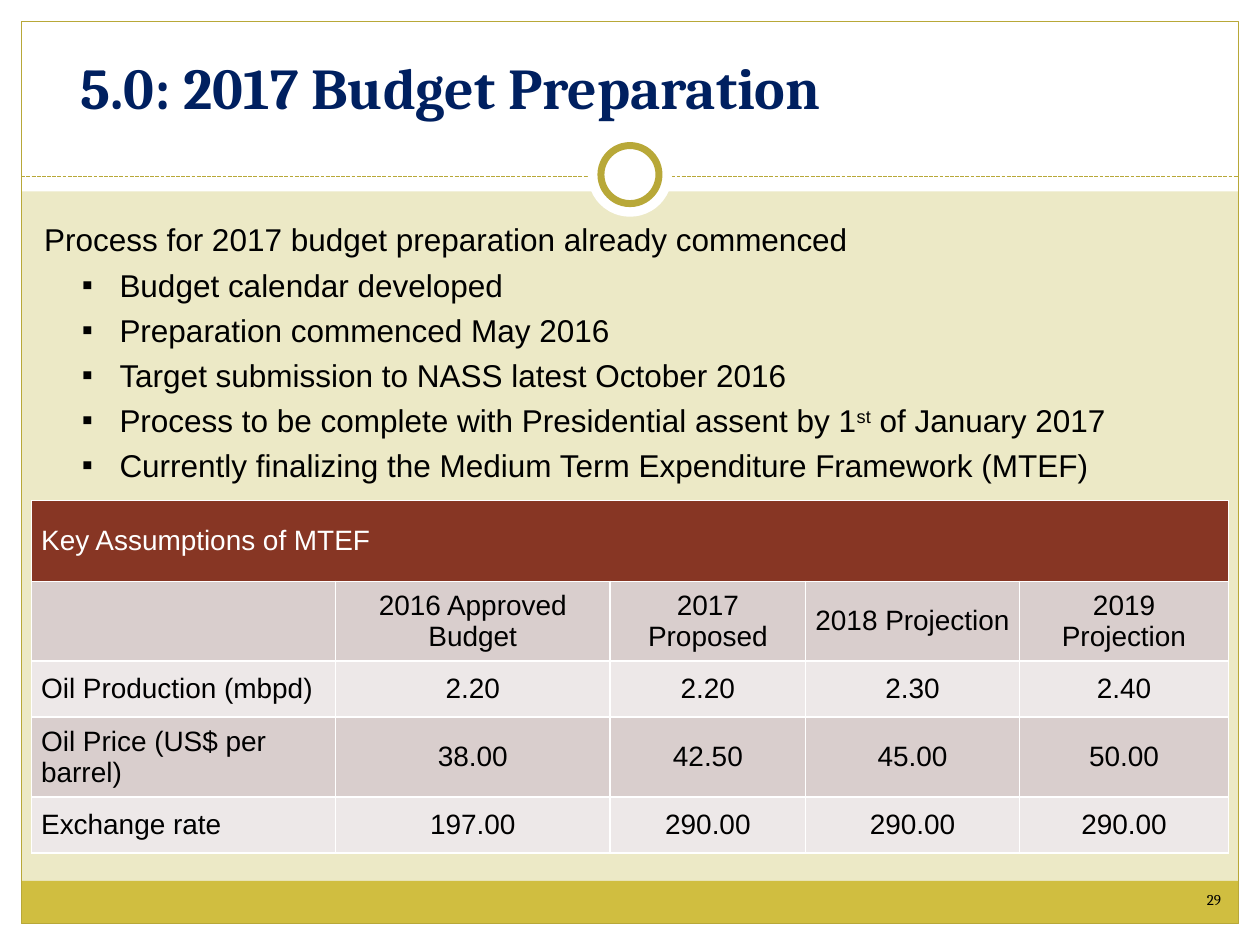
from dataclasses import dataclass
from lxml.etree import SubElement
from pptx import Presentation
from pptx.dml.color import RGBColor
from pptx.enum.dml import MSO_LINE
from pptx.enum.shapes import MSO_CONNECTOR, MSO_SHAPE
from pptx.enum.text import MSO_ANCHOR, MSO_AUTO_SIZE, PP_ALIGN
from pptx.oxml.ns import qn
from pptx.util import Cm, Pt


@dataclass(frozen=True)
class Theme:
    page: str = "ECE9C6"
    white: str = "FFFFFF"
    black: str = "000000"
    navy: str = "002060"
    gold: str = "B8A838"
    foot: str = "D0BE40"
    head: str = "873624"
    bands: tuple = ("D9CECD", "EDE8E8")
    serif: str = "Cambria"
    sans: str = "Arial"
    big: float = 33
    text: float = 18
    cell: float = 16
    small: float = 8.6


THEME = Theme()
WIDE, HIGH = 25.4, 19.05
POINTS = [
    "Budget calendar developed",
    "Preparation commenced May 2016",
    "Target submission to NASS latest October 2016",
    "Process to be complete with Presidential assent by 1^st^ of January 2017",
    "Currently finalizing the Medium Term Expenditure Framework (MTEF)",
]
ROWS = [
    ["Key Assumptions of MTEF", "", "", "", ""],
    ["", "2016 Approved Budget", "2017 Proposed", "2018 Projection", "2019 Projection"],
    ["Oil Production (mbpd)", "2.20", "2.20", "2.30", "2.40"],
    ["Oil Price (US$ per barrel)", "38.00", "42.50", "45.00", "50.00"],
    ["Exchange rate", "197.00", "290.00", "290.00", "290.00"],
]


def tint(name):
    return RGBColor.from_string(name)


def style(para, size, color, face=THEME.sans, bold=False):
    for run in para.runs:
        font = run.font
        font.name, font.size, font.bold = face, Pt(size), bold
        font.color.rgb = tint(color)


def add_form(slide, kind, box, fill=None, line=None, width=0.75):
    form = slide.shapes.add_shape(kind, *map(Cm, box))
    form.shadow.inherit = False
    if fill:
        form.fill.solid()
        form.fill.fore_color.rgb = tint(fill)
    else:
        form.fill.background()
    if line:
        form.line.color.rgb = tint(line)
        form.line.width = Pt(width)
    else:
        form.line.fill.background()
    return form


def add_frame(slide, box):
    left, top, wide, high = box
    edge, band, foot = 0.43, 3.86, 0.86
    rect = MSO_SHAPE.RECTANGLE
    right, base = left + wide - edge, top + high - edge
    inner = wide - 2 * edge
    for part in [
        (left, base, wide, edge),
        (left, top, wide, band),
        (left, top, edge, high),
        (right, top, edge, high),
    ]:
        add_form(slide, rect, part, THEME.white)
    add_form(slide, rect, (left + edge, base - foot, inner, foot), THEME.foot)
    add_form(slide, rect, (left + edge, top + edge, inner, high - 2 * edge), line=THEME.gold)

    level = Cm(top + 3.56)
    rule = slide.shapes.add_connector(
        MSO_CONNECTOR.STRAIGHT, Cm(left + edge), level, Cm(right), level)
    rule.line.color.rgb = tint(THEME.gold)
    rule.line.width = Pt(0.75)
    rule.line.dash_style = MSO_LINE.SQUARE_DOT
    SubElement(rule._element.spPr, qn("a:effectLst"))

    for size, line in [(1.7, None), (1.17, THEME.gold)]:
        spot = (left + (wide - size) / 2, top + 3.52 - size / 2, size, size)
        add_form(slide, MSO_SHAPE.OVAL, spot, THEME.white, line, 4)


def add_title(slide, box, text):
    title = slide.shapes.title
    slide.shapes._spTree.append(title._element)
    title.left, title.top, title.width, title.height = map(Cm, box)
    frame = title.text_frame
    frame.text = text
    frame.auto_size = MSO_AUTO_SIZE.NONE
    frame.vertical_anchor = MSO_ANCHOR.BOTTOM
    para = frame.paragraphs[0]
    para.alignment = PP_ALIGN.LEFT
    style(para, THEME.big, THEME.navy, THEME.serif, True)


def add_point(frame, text):
    para = frame.add_paragraph()
    para.level = 1
    first, *rest = text.split("^")
    para.text = first
    for index, part in enumerate(rest):
        run = para.add_run()
        run.text = part
        if index % 2 == 0:
            run._r.get_or_add_rPr().set("baseline", "30000")
    props = para._p.get_or_add_pPr()
    props.set("marL", str(Cm(1.52)))
    props.set("indent", str(Cm(-0.76)))
    SubElement(props, qn("a:buFont"), typeface=THEME.sans)
    SubElement(props, qn("a:buChar"), char="▪")


def add_body(slide, box, lead, points):
    frame = slide.shapes.add_textbox(*map(Cm, box)).text_frame
    frame.word_wrap = True
    frame.text = lead
    for point in points:
        add_point(frame, point)
    for para in frame.paragraphs:
        para.space_before = Pt(4.2)
        style(para, THEME.text, THEME.black)


def add_edges(cell):
    props = cell._tc.get_or_add_tcPr()
    for side in "LRTB":
        edge = SubElement(props, qn(f"a:ln{side}"), w=str(Pt(1)))
        fill = SubElement(edge, qn("a:solidFill"))
        SubElement(fill, qn("a:srgbClr"), val=THEME.white)


def add_grid(slide, box, rows, cols, heights):
    table = slide.shapes.add_table(len(rows), len(cols), *map(Cm, box)).table
    for col, size in zip(table.columns, cols):
        col.width = Cm(size)
    for row, size in zip(table.rows, heights):
        row.height = Cm(size)
    for y, row in enumerate(rows):
        for x, text in enumerate(row):
            cell = table.cell(y, x)
            add_edges(cell)
            cell.fill.solid()
            cell.fill.fore_color.rgb = tint(THEME.bands[(y - 1) % 2] if y else THEME.head)
            cell.vertical_anchor = MSO_ANCHOR.MIDDLE
            cell.margin_left = cell.margin_right = Cm(0.19)
            cell.text_frame.text = text
            para = cell.text_frame.paragraphs[0]
            para.alignment = PP_ALIGN.CENTER if x else PP_ALIGN.LEFT
            style(para, THEME.cell, THEME.black if y else THEME.white)
    table.cell(0, 0).merge(table.cell(0, len(cols) - 1))


def add_number(slide, box, text):
    frame = slide.shapes.add_textbox(*map(Cm, box)).text_frame
    frame.word_wrap = True
    frame.text = text
    style(frame.paragraphs[0], THEME.small, THEME.black, THEME.serif)


def main():
    deck = Presentation()
    deck.slide_width, deck.slide_height = Cm(WIDE), Cm(HIGH)
    slide = deck.slides.add_slide(deck.slide_layouts[5])
    slide.background.fill.solid()
    slide.background.fill.fore_color.rgb = tint(THEME.page)
    add_frame(slide, (0, 0, WIDE, HIGH))
    add_title(slide, (1.37, 0.43, 22.45, 2.13), "5.0: 2017 Budget Preparation")
    add_body(slide, (0.64, 4.32, 24.13, 5.84),
             "Process for 2017 budget preparation already commenced", POINTS)
    add_number(slide, (24.08, 17.83, 0.89, 0.81), "29")
    add_grid(slide, (0.64, 10.09, 24.13, 6.91), ROWS,
             (6.12, 5.54, 3.94, 4.31, 4.22), (1.63, 1.5, 1.13, 1.5, 1.13))
    deck.save("out.pptx")


if __name__ == "__main__":
    main()
